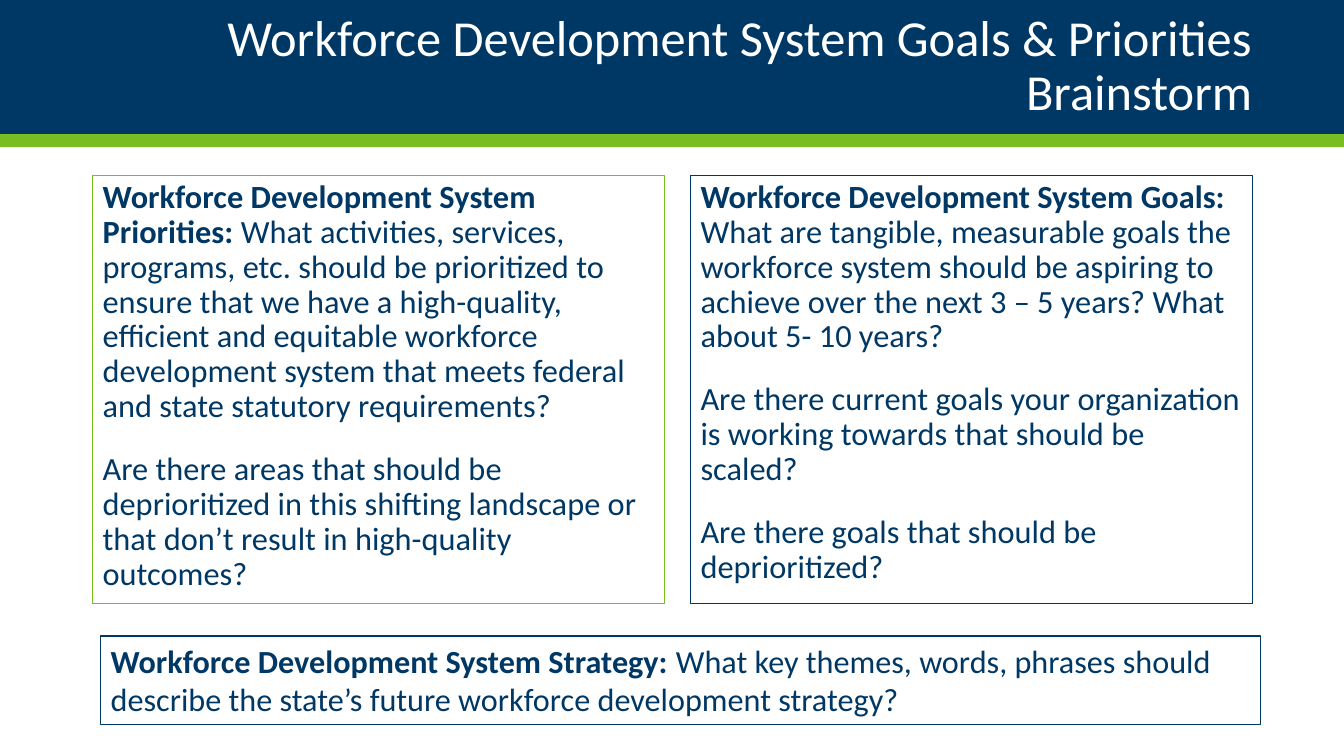
import pptx
import pptx.util
import pptx.dml.color
import pptx.enum.shapes
import pptx.enum.text

Inches = pptx.util.Inches
Pt = pptx.util.Pt
RGBColor = pptx.dml.color.RGBColor
PP_ALIGN = pptx.enum.text.PP_ALIGN
ANCHOR = pptx.enum.text.MSO_ANCHOR

NAVY = RGBColor(0x00, 0x38, 0x65)
GREEN = RGBColor(0x78, 0xBE, 0x21)
WHITE = RGBColor(0xFF, 0xFF, 0xFF)

WIDE, HIGH = 13.33, 7.5
EDGE = 0.92

GOALS = [
    ("Workforce Development System Goals: ",
     "What are tangible, measurable goals the workforce system should be "
     "aspiring to achieve over the next 3 – 5 years? What about 5- 10 years?"),
    ("", "Are there current goals your organization is working towards "
     "that should be scaled?"),
    ("", "Are there goals that should be deprioritized?"),
]
FOCUS = [
    ("Workforce Development System Priorities: ",
     "What activities, services, programs, etc. should be prioritized to "
     "ensure that we have a high-quality, efficient and equitable workforce "
     "development system that meets federal and state statutory "
     "requirements?"),
    ("", "Are there areas that should be deprioritized in this shifting "
     "landscape or that don’t result in high-quality outcomes?"),
]
PLAN = [
    ("Workforce Development System Strategy: ",
     "What key themes, words, phrases should describe the state’s future "
     "workforce development strategy?"),
]


def apply(item, form):
    for name, value in form.items():
        setattr(item, name, value)


def add_rect(slide, box, fill=None, line=None):
    kind = pptx.enum.shapes.MSO_SHAPE.RECTANGLE
    rect = slide.shapes.add_shape(kind, *map(Inches, box))
    rect.shadow.inherit = False
    if fill is None:
        rect.fill.background()
    else:
        rect.fill.solid()
        rect.fill.fore_color.rgb = fill
    if line is None:
        rect.line.fill.background()
    else:
        rect.line.color.rgb = line
        rect.line.width = Pt(0.85)
    return rect


def add_run(para, text, size, color, bold=False):
    run = para.add_run()
    run.text = text
    apply(run.font, {"name": "Calibri", "size": Pt(size), "bold": bold})
    run.font.color.rgb = color


def add_head(slide, box):
    left, top, width, height = box
    # Bands
    add_rect(slide, box, NAVY)
    add_rect(slide, (left, top + height, width, 0.13), GREEN)
    # Title
    place = (left + EDGE, top, width - 2 * EDGE + 0.01, height)
    frame = slide.shapes.add_textbox(*map(Inches, place)).text_frame
    apply(frame, {"word_wrap": True, "vertical_anchor": ANCHOR.MIDDLE,
                  "margin_left": 0, "margin_right": 0})
    para = frame.paragraphs[0]
    apply(para, {"alignment": PP_ALIGN.RIGHT, "line_spacing": 0.9})
    add_run(para, "Workforce Development System Goals & Priorities Brainstorm",
            36, WHITE)


def add_panel(slide, box, paras, line, size, form, fill=None):
    frame = add_rect(slide, box, fill, line).text_frame
    apply(frame, {"word_wrap": True, "vertical_anchor": ANCHOR.TOP})
    for index, (lead, body) in enumerate(paras):
        para = frame.add_paragraph() if index else frame.paragraphs[0]
        para.alignment = PP_ALIGN.LEFT
        apply(para, form)
        if index == 0:
            para.space_before = Pt(0)
        if lead:
            add_run(para, lead, size, NAVY, True)
        add_run(para, body, size, NAVY)


def add_body(slide, box):
    left, top, width, height = box
    form = {"line_spacing": 0.9, "space_before": Pt(10),
            "space_after": Pt(10)}
    # Two question panels
    split = 5.93
    add_panel(slide, (left, top, 5.67, height), FOCUS, GREEN, 23.1, form)
    add_panel(slide, (left + split, top, width - split, height), GOALS,
              NAVY, 23.1, form)
    # Strategy panel
    add_panel(slide, (left + 0.08, top + height + 0.32, width, 0.88), PLAN,
              NAVY, 23, {}, WHITE)


def main():
    deck = pptx.Presentation()
    apply(deck, {"slide_width": Inches(WIDE), "slide_height": Inches(HIGH)})
    slide = deck.slides.add_slide(deck.slide_layouts[6])
    add_head(slide, (0, 0, WIDE, 1.33))
    add_body(slide, (EDGE, 1.74, 11.5, 4.25))
    deck.save("out.pptx")


if __name__ == "__main__":
    main()
